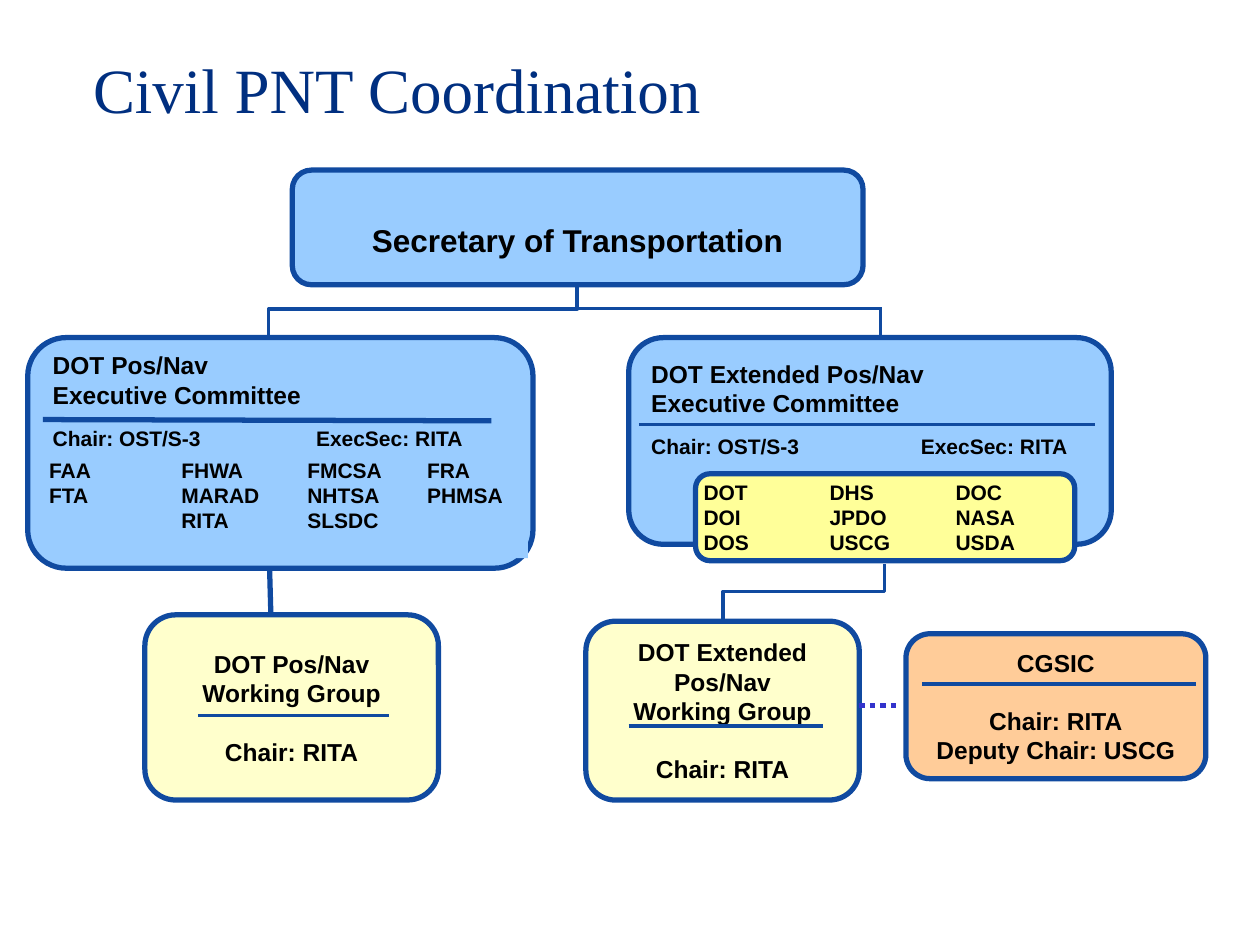
from pptx import Presentation
from pptx.dml.color import RGBColor as RGB
from pptx.enum.dml import MSO_LINE as Dash
from pptx.enum.shapes import MSO_CONNECTOR as Link, MSO_SHAPE as Kind
from pptx.enum.text import MSO_ANCHOR as Anchor, PP_ALIGN as Align
from pptx.oxml.ns import qn
from pptx.util import Inches, Pt
from lxml.etree import SubElement as Sub

NAVY = RGB(0x10, 0x4A, 0xA0)
TITLE = RGB(0x00, 0x2F, 0x80)
DOTS = RGB(0x33, 0x33, 0xCC)
BLACK = RGB(0, 0, 0)
BLUE = RGB(0x99, 0xCC, 0xFF)
YELLOW = RGB(0xFF, 0xFF, 0x99)
CREAM = RGB(0xFF, 0xFF, 0xCC)
PEACH = RGB(0xFF, 0xCC, 0x99)
COLS, ROWS = 100, 75  # grid cells across and down the slide
GAP = 16.5  # points before a chair line


class Chart:
    """Style and slide of the organisation chart; lengths are grid cells."""

    def __init__(self, deck):
        self.slide = deck.slides.add_slide(deck.slide_layouts[6])
        self.shapes = self.slide.shapes
        self.col = deck.slide_width / COLS
        self.row = deck.slide_height / ROWS

    def place(self, x, y, *rest):
        pairs = zip((x, y) + rest, (self.col, self.row) * 2)
        return [round(n * unit) for n, unit in pairs]

    def fill_in(self, shape, lines, size=14, align=Align.LEFT, tabs=(),
                font="Arial", color=BLACK, bold=True):
        """Each line is a text, or a text with its space before and size."""
        frame = shape.text_frame
        for i, line in enumerate(lines):
            text, gap, pts = (line, 0, size) if isinstance(line, str) else line
            para = frame.paragraphs[0] if i == 0 else frame.add_paragraph()
            para.text = text
            para.alignment = align
            if gap:
                para.space_before = Pt(gap)
            if tabs and "\t" in text:
                stops = Sub(para._p.get_or_add_pPr(), qn("a:tabLst"))
                for stop in tabs:
                    Sub(stops, qn("a:tab"), pos=str(round(stop * self.col)), algn="l")
            style = para.font
            style.name, style.size, style.bold = font, Pt(pts), bold
            style.color.rgb = color

    def box(self, at, fill, lines=(), kind=Kind.ROUNDED_RECTANGLE, edge=True,
            anchor=Anchor.MIDDLE, top=0.03, **style):
        shape = self.shapes.add_shape(kind, *self.place(*at))
        shape.shadow.inherit = False
        shape.fill.solid()
        shape.fill.fore_color.rgb = fill
        if edge:
            shape.line.color.rgb = NAVY
            shape.line.width = Pt(3)
        else:
            shape.line.fill.background()
        frame = shape.text_frame
        frame.word_wrap = True
        frame.vertical_anchor = anchor
        frame.margin_left = frame.margin_right = frame.margin_bottom = Inches(0.03)
        frame.margin_top = Inches(top)
        self.fill_in(shape, lines, **style)

    def label(self, at, lines, wrap=True, **style):
        shape = self.shapes.add_textbox(*self.place(*at))
        shape.text_frame.word_wrap = wrap
        self.fill_in(shape, lines, **style)

    def line(self, start, end, width=2, color=NAVY, dash=None, kind=Link.STRAIGHT):
        link = self.shapes.add_connector(kind, *self.place(*start, *end))
        link.line.color.rgb = color
        link.line.width = Pt(width)
        if dash:
            link.line.dash_style = dash
        Sub(link.element.spPr, qn("a:effectLst"))
        return link

    def elbow(self, start, end, bend):
        """Runs down, left and down: a quarter turn of the usual elbow."""
        (x1, y1), (x2, y2) = start, end
        wide, high = y2 - y1, x1 - x2
        left, top = (x1 + x2 - wide) / 2, (y1 + y2 - high) / 2
        link = self.line((left, top), (left + wide, top + high), kind=Link.ELBOW)
        props = link.element.spPr
        props.find(qn("a:xfrm")).set("rot", str(90 * 60000))
        guides = props.find(qn("a:prstGeom")).find(qn("a:avLst"))
        Sub(guides, qn("a:gd"), name="adj1", fmla=f"val {round(bend * 100000)}")


def main():
    deck = Presentation()
    deck.slide_width, deck.slide_height = Inches(10), Inches(7.5)
    org = Chart(deck)
    mid = Align.CENTER

    # Secretary
    org.box((23.2, 13.5, 45.3, 9.1), BLUE, ["Secretary of Transportation"],
            size=18, align=mid, top=0.22)

    # Extended committee and its members
    org.box((49.9, 26.8, 38.3, 16.4), BLUE)
    org.line((50.7, 33.7), (86.9, 33.7))
    org.box((55.2, 37.6, 30.1, 6.9), YELLOW,
            ["DOT\tDHS\tDOC", "DOI\tJPDO\tNASA", "DOS\tUSCG\tUSDA"],
            size=12, tabs=(10, 20))

    # Working groups and the service committee
    chair = ("Chair: RITA", GAP, 14)
    groups = [
        ((11.5, 48.8, 23.3, 14.7), CREAM, ["DOT Pos/Nav", "Working Group", chair],
         (15.7, 30.9, 56.8)),
        ((46.5, 49.3, 21.7, 14.2), CREAM,
         ["DOT Extended Pos/Nav", "Working Group", chair], (49.9, 65.3, 57.6)),
        ((71.9, 50.3, 23.8, 11.5), PEACH, ["CGSIC", chair, "Deputy Chair: USCG"],
         (73.2, 94.9, 54.3)),
    ]
    for at, fill, lines, (left, right, y) in groups:
        org.box(at, fill, lines, align=mid)
        org.line((left, y), (right, y))

    # Links between the levels
    org.elbow((45.8, 22.7), (21.3, 26.8), 0.45)
    org.elbow((70.2, 44.8), (57.4, 49.1), 0.5)

    # Executive committee and its members
    org.box((2.2, 26.8, 40.1, 18.3), BLUE)
    org.box((3.6, 36, 38.3, 8.3), BLUE,
            ["FAA\tFHWA\tFMCSA\tFRA", "FTA\tMARAD\tNHTSA\tPHMSA", "\tRITA\tSLSDC"],
            kind=Kind.RECTANGLE, edge=False, anchor=Anchor.TOP,
            size=12, tabs=(10.5, 20.5, 30))
    org.line((3.4, 33.3), (39, 33.4), width=3)
    org.line((21.4, 45.2), (21.5, 48.9), width=3)

    # Committee headings
    heads = [
        ((50.7, 28, 48, 9), "DOT Extended Pos/Nav", 21.4),
        ((3.2, 27.3, 48, 9), "DOT Pos/Nav", 20.9),
    ]
    for at, name, tab in heads:
        org.label(at, [name, "Executive Committee",
                       ("Chair: OST/S-3\tExecSec: RITA", 9.2, 12)], tabs=(tab,))

    # Right branch and dotted tie
    org.line((45.7, 24.5), (69.9, 24.5))
    org.line((69.9, 24.4), (69.9, 26.9))
    org.line((68.2, 56), (71.5, 56), 3, DOTS, Dash.ROUND_DOT)

    # Title
    org.label((6.4, 3.5, 50.3, 7), ["Civil PNT Coordination"], wrap=False,
              size=36, font="Times New Roman", color=TITLE, bold=False)

    deck.save("out.pptx")


if __name__ == "__main__":
    main()
